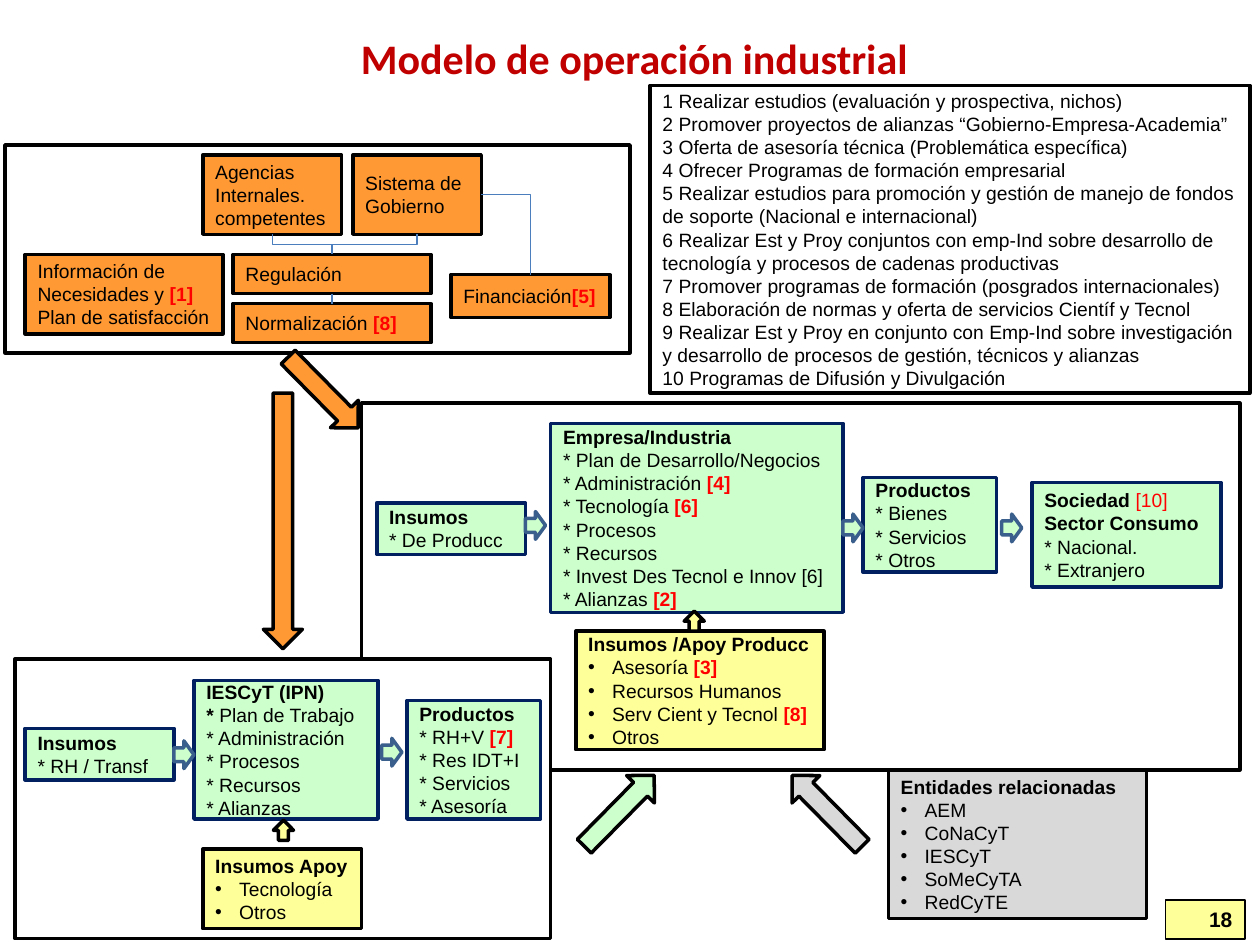
from dataclasses import dataclass

from lxml.etree import SubElement
from pptx import Presentation
from pptx.dml.color import RGBColor
from pptx.enum.shapes import MSO_CONNECTOR, MSO_SHAPE
from pptx.enum.text import MSO_ANCHOR, PP_ALIGN
from pptx.oxml.ns import qn
from pptx.util import Inches, Pt


@dataclass(frozen=True)
class Theme:
    black: str = "000000"
    white: str = "FFFFFF"
    red: str = "FF0000"
    title: str = "C00000"
    orange: str = "FF9933"
    green: str = "CCFFCC"
    yellow: str = "FFFF99"
    grey: str = "D9D9D9"
    navy: str = "002060"
    steel: str = "3A5F8C"
    connector: str = "4B7EBC"
    body_font: str = "Arial"
    title_font: str = "Calibri"
    body_size: int = 11
    number_size: int = 12
    title_size: int = 24
    border: float = 2
    thin: float = 0.75


THEME = Theme()
COLUMNS, ROWS = 100, 75
CELL = Inches(0.1)
BULLET = "• "
PLAIN = {"bold": False, "color": THEME.black}
RUN_STYLES = {
    "B": {"bold": True, "color": THEME.black},
    "P": PLAIN,
    "R": {"bold": True, "color": THEME.red},
    "r": {"bold": False, "color": THEME.red},
}


def cells(*lengths):
    return [round(length * CELL) for length in lengths]


def within(region, part):
    """Move a part's box from its region's grid to the slide's grid."""
    return (region[0] + part[0], region[1] + part[1], part[2], part[3])


def format_run(run, bold, color, size=THEME.body_size, name=THEME.body_font):
    for attribute, value in {"bold": bold, "size": Pt(size), "name": name}.items():
        setattr(run.font, attribute, value)
    run.font.color.rgb = RGBColor.from_string(color)


def add_bullet(paragraph):
    properties = paragraph._p.get_or_add_pPr()
    properties.set("marL", str(Inches(0.19)))
    properties.set("indent", str(-Inches(0.19)))
    SubElement(properties, qn("a:buFont")).set("typeface", THEME.body_font)
    SubElement(properties, qn("a:buChar")).set("char", BULLET.strip())


def write_lines(shape, lines, align=PP_ALIGN.LEFT, **run_format):
    """Write one paragraph a line; ^ and a key of RUN_STYLES starts a styled run."""
    frame = shape.text_frame
    frame.word_wrap = True
    frame.vertical_anchor = MSO_ANCHOR.MIDDLE
    for index, line in enumerate(lines):
        paragraph = frame.add_paragraph() if index else frame.paragraphs[0]
        paragraph.alignment = align
        if line.startswith(BULLET):
            add_bullet(paragraph)
            line = line.removeprefix(BULLET)
        plain, *styled = line.split("^")
        runs = [(plain, PLAIN)] if plain else []
        runs += [(part[1:], RUN_STYLES[part[0]]) for part in styled]
        for text, style in runs:
            run = paragraph.add_run()
            run.text = text
            format_run(run, **{**style, **run_format})


def add_block(slide, box, fill, line=THEME.black, lines=(), kind=MSO_SHAPE.FLOWCHART_PROCESS,
              width=THEME.border, rotation=0):
    shape = slide.shapes.add_shape(kind, *cells(*box))
    shape.shadow.inherit = False
    shape.rotation = rotation
    shape.fill.solid()
    shape.fill.fore_color.rgb = RGBColor.from_string(fill)
    shape.line.color.rgb = RGBColor.from_string(line)
    shape.line.width = Pt(width)
    if lines:
        write_lines(shape, lines)
    return shape


def add_link(slide, start, start_side, end, end_side, kind=MSO_CONNECTOR.ELBOW):
    link = slide.shapes.add_connector(kind, 0, 0, 0, 0)
    link.begin_connect(start, start_side)
    link.end_connect(end, end_side)
    link.line.color.rgb = RGBColor.from_string(THEME.connector)
    link.line.width = Pt(THEME.thin)
    SubElement(link._element.spPr, qn("a:effectLst"))
    return link


def turn_downward(link):
    """Turn an elbow so that it leaves its start downward instead of sideways."""
    rightward = link.begin_x < link.end_x
    left, top, width, height = link.left, link.top, link.width, link.height
    link.left = left + (width - height) // 2
    link.top = top + (height - width) // 2
    link.width, link.height = height, width
    transform = link._element.spPr.find(qn("a:xfrm"))
    transform.attrib.pop("flipH", None)
    transform.set("rot", str((270 if rightward else 90) * 60000))
    if rightward:
        transform.set("flipH", "1")


def draw_government(slide, region):
    add_block(slide, region, THEME.white)
    parts = {
        "needs": ((1.6, 8.7, 15.7, 6.3),
                  ["Información de Necesidades y ^R[1]", "Plan de satisfacción"]),
        "regulation": ((18.1, 8.7, 15.7, 3.1), ["Regulación"]),
        "standards": ((18.1, 12.6, 15.7, 3.1), ["Normalización ^R[8]"]),
        "funding": ((35.4, 10.3, 12.6, 3.4), ["Financiación^R[5]"]),
        "agencies": ((15.7, 0.8, 11, 6.3), ["Agencias Internales. competentes"]),
        "government": ((27.6, 0.8, 10.2, 6.3), ["Sistema de Gobierno"]),
    }
    blocks = {name: add_block(slide, within(region, box), THEME.orange, lines=lines)
              for name, (box, lines) in parts.items()}
    for source in ("agencies", "government"):
        turn_downward(add_link(slide, blocks[source], 2, blocks["regulation"], 0))
    add_link(slide, blocks["regulation"], 2, blocks["standards"], 0, MSO_CONNECTOR.STRAIGHT)
    corner = add_link(slide, blocks["government"], 3, blocks["funding"], 0)
    corner._element.spPr.find(qn("a:prstGeom")).set("prst", "bentConnector2")


def draw_process(slide, region, stages, support, flows, support_arrow):
    """Draw a frame with green stages, a yellow support block and the arrows between."""
    add_block(slide, region, THEME.white)
    for box, lines in stages:
        add_block(slide, within(region, box), THEME.green, THEME.navy, lines)
    add_block(slide, within(region, support[0]), THEME.yellow, lines=support[1])
    for left, top in flows:
        add_block(slide, within(region, (left, top, 1.6, 2.2)), THEME.green, THEME.steel,
                  kind=MSO_SHAPE.RIGHT_ARROW)
    add_block(slide, within(region, (*support_arrow, 1.6, 1.6)), THEME.yellow,
              kind=MSO_SHAPE.UP_ARROW)


def draw_industry(slide, region):
    stages = [
        ((15, 1.6, 23.2, 15), [
            "^BEmpresa/Industria", "* Plan de Desarrollo/Negocios", "* Administración ^R[4]",
            "* Tecnología ^R[6]", "* Procesos", "* Recursos",
            "* Invest Des Tecnol e Innov [6]", "* Alianzas ^R[2]"]),
        ((39.8, 5.9, 10.6, 7.5), ["^BProductos", "* Bienes", "* Servicios", "* Otros"]),
        ((1.2, 7.9, 11.8, 4.1), ["^BInsumos", "* De Producc"]),
        ((53.2, 6.3, 15, 8.3),
         ["^BSociedad ^r[10]", "^BSector Consumo", "* Nacional.", "* Extranjero"]),
    ]
    support = ((17, 18.1, 19.7, 9.4), [
        "^BInsumos /Apoy Producc", "• Asesoría ^R[3]", "• Recursos Humanos",
        "• Serv Cient y Tecnol^R [8]", "• Otros"])
    draw_process(slide, region, stages, support,
                 [(38.2, 8.8), (13, 8.6), (50.8, 8.8)], (25.6, 16.5))


def draw_institute(slide, region):
    stages = [
        ((14.2, 1.7, 14.6, 11), ["^BIESCyT (IPN)", "^B* ^PPlan de Trabajo", "* Administración",
                                 "* Procesos", "* Recursos", "* Alianzas"]),
        ((31.1, 3.3, 10.6, 9.4),
         ["^BProductos", "* RH+V ^R[7]", "* Res IDT+I", "* Servicios", "* Asesoría"]),
        ((0.8, 5.5, 11.8, 4.1), ["^BInsumos", "* RH / Transf"]),
    ]
    support = ((14.9, 15.1, 12.6, 6.3), ["^BInsumos Apoy", "• Tecnología", "• Otros"])
    draw_process(slide, region, stages, support, [(29.1, 6.3), (12.6, 6.5)], (20.5, 12.8))


def draw_region_arrows(slide, region):
    down, up = MSO_SHAPE.DOWN_ARROW, MSO_SHAPE.UP_ARROW
    for box, kind, fill, rotation in [
        ((20.9, 31.2, 3.1, 20.3), down, THEME.orange, 0),
        ((24.1, 27.2, 3.1, 7.9), down, THEME.orange, 315.4),
        ((47.6, 60.4, 3.1, 7.9), up, THEME.green, 44.6),
        ((64.1, 60.4, 3.1, 7.9), up, THEME.grey, 315.4),
    ]:
        add_block(slide, within(region, box), fill, kind=kind, rotation=rotation)


def draw_actions(slide, region):
    add_block(slide, region, THEME.white, lines=[
        "1 Realizar estudios (evaluación y prospectiva, nichos)",
        "2 Promover proyectos de alianzas “Gobierno-Empresa-Academia”",
        "3 Oferta de asesoría técnica (Problemática específica)",
        "4 Ofrecer Programas de formación empresarial",
        "5 Realizar estudios para promoción y gestión de manejo de fondos de soporte "
        "(Nacional e internacional)",
        "6 Realizar Est y Proy conjuntos con emp-Ind sobre desarrollo de tecnología y "
        "procesos de cadenas productivas",
        "7 Promover programas de formación (posgrados internacionales)",
        "8 Elaboración de normas y oferta de servicios Científ y Tecnol",
        "9 Realizar Est y Proy en conjunto con Emp-Ind sobre investigación y desarrollo de "
        "procesos de gestión, técnicos y alianzas",
        "10 Programas de Difusión y Divulgación"])


def draw_entities(slide, region):
    add_block(slide, region, THEME.grey, lines=[
        "^BEntidades relacionadas", "• AEM", "• CoNaCyT", "• IESCyT", "• SoMeCyTA", "• RedCyTE"])


def draw_title(slide, region):
    write_lines(slide.shapes.add_textbox(*cells(*region)), ["^BModelo de operación industrial"],
                PP_ALIGN.CENTER, color=THEME.title, size=THEME.title_size, name=THEME.title_font)


def draw_number(slide, region):
    block = add_block(slide, region, THEME.yellow, kind=MSO_SHAPE.RECTANGLE, width=1)
    write_lines(block, ["^B18"], PP_ALIGN.RIGHT, size=THEME.number_size)


def main():
    presentation = Presentation()
    presentation.slide_width, presentation.slide_height = cells(COLUMNS, ROWS)
    slide = presentation.slides.add_slide(presentation.slide_layouts[6])
    for draw, region in [
        (draw_number, (92.5, 71.4, 6.3, 3.1)),
        (draw_title, (16.1, 0, 68.5, 9.2)),
        (draw_entities, (70.5, 61.1, 20.5, 11.8)),
        (draw_industry, (28.7, 32, 69.7, 29.1)),
        (draw_institute, (1.2, 52.3, 42.5, 22.2)),
        (draw_government, (0.4, 11.5, 49.6, 16.5)),
        (draw_region_arrows, (0, 0, COLUMNS, ROWS)),
        (draw_actions, (51.6, 6.8, 47.6, 24.4)),
    ]:
        draw(slide, region)
    presentation.save("out.pptx")


if __name__ == "__main__":
    main()
